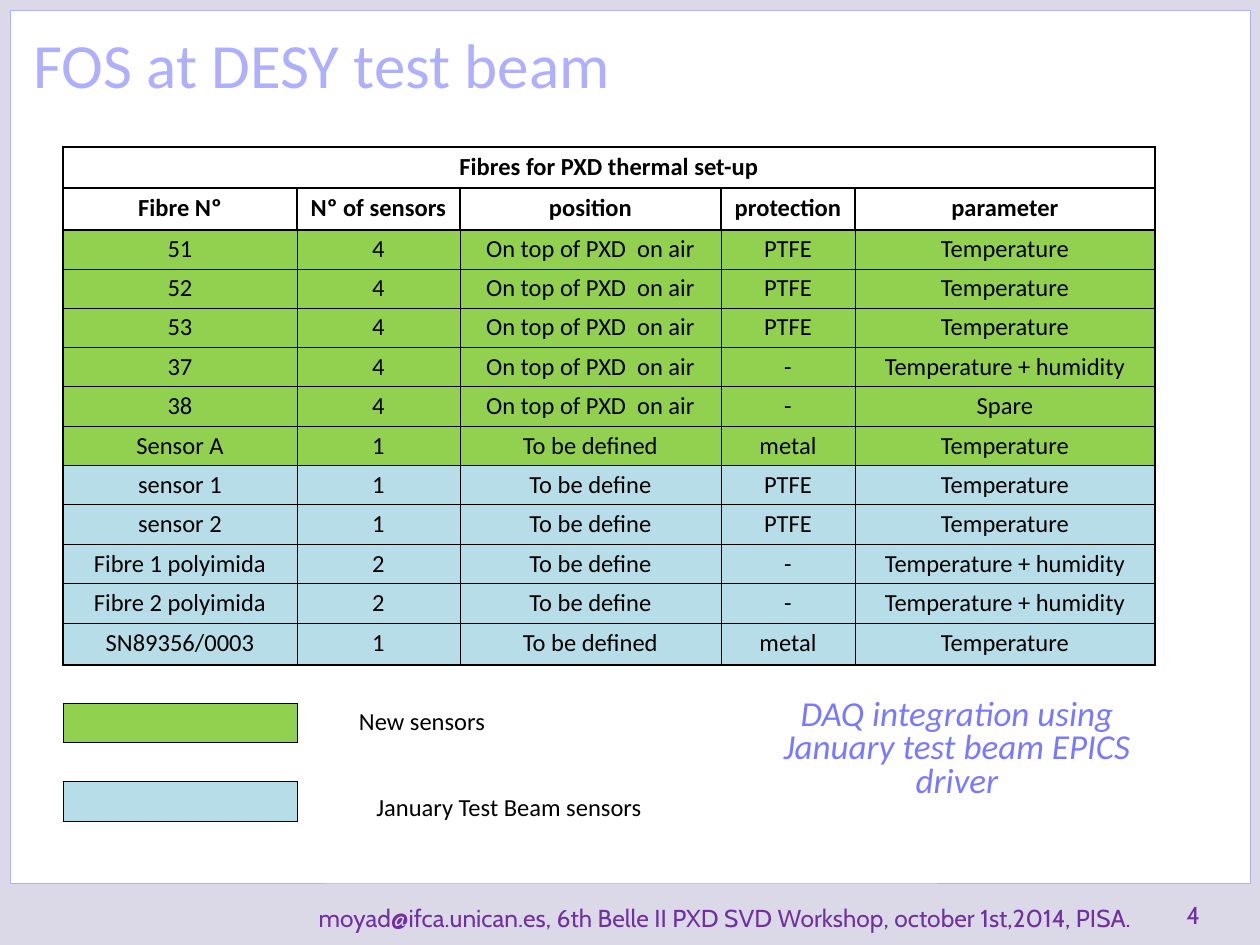
from lxml.etree import SubElement
from pptx import Presentation
from pptx.dml.color import RGBColor
from pptx.enum.shapes import MSO_SHAPE
from pptx.enum.text import MSO_ANCHOR, PP_ALIGN
from pptx.oxml.ns import qn
from pptx.util import Emu, Pt

PIXELS_PER_INCH = 126
COLORS = {
    "background": "DBD9E7",
    "panel": "FFFFFF",
    "title": "AFAFFF",
    "note": "7979FF",
    "footer": "7030A0",
    "text": "000000",
    "new": "92D050",
    "january": "B7DEE8",
}
NO_GRID_STYLE = "{2D5ABB26-0587-4C30-8999-92F81FD0307C}"
THIN, THICK = Pt(0.5), Pt(1)

HEADINGS = ["Fibre Nº", "Nº of sensors", "position", "protection", "parameter"]
ON_AIR = "On top of PXD  on air"
BOTH = "Temperature + humidity"
NEW_FIBRES = [
    ["51", "4", ON_AIR, "PTFE", "Temperature"],
    ["52", "4", ON_AIR, "PTFE", "Temperature"],
    ["53", "4", ON_AIR, "PTFE", "Temperature"],
    ["37", "4", ON_AIR, "-", BOTH],
    ["38", "4", ON_AIR, "-", "Spare"],
    ["Sensor A", "1", "To be defined", "metal", "Temperature"],
]
JANUARY_FIBRES = [
    ["sensor 1", "1", "To be define", "PTFE", "Temperature"],
    ["sensor 2", "1", "To be define", "PTFE", "Temperature"],
    ["Fibre 1 polyimida", "2", "To be define", "-", BOTH],
    ["Fibre 2 polyimida", "2", "To be define", "-", BOTH],
    ["SN89356/0003", "1", "To be defined", "metal", "Temperature"],
]
COLUMN_EDGES = [63, 297, 460, 721, 855, 1155]
BODY_EDGES = [230 + 394 * index // 10 for index in range(11)]
ROW_EDGES = [147, 188, *BODY_EDGES, 665, 704, 743, 780, 820]
NEW_LEGEND_ROW, JANUARY_LEGEND_ROW = 14, 16


def px(length):
    return Emu(round(length * 914400 / PIXELS_PER_INCH))


def color(name):
    return RGBColor.from_string(COLORS[name])


def add_run(paragraph, text, size, name, font="Calibri", bold=False, italic=False):
    run = paragraph.add_run()
    run.text = text
    run.font.size = Pt(size)
    run.font.name = font
    run.font.bold = bold
    run.font.italic = italic
    run.font.color.rgb = color(name)


def add_panel(slide):
    shape = slide.shapes.add_shape(MSO_SHAPE.RECTANGLE, px(10), px(10), px(1240), px(873))
    shape.shadow.inherit = False
    shape.fill.solid()
    shape.fill.fore_color.rgb = color("panel")
    shape.line.color.rgb = color("title")
    shape.line.width = Pt(0.25)


def add_text(slide, box, text, size, name, align=PP_ALIGN.LEFT,
             anchor=MSO_ANCHOR.TOP, spacing=1.0, **style):
    frame = slide.shapes.add_textbox(*map(px, box)).text_frame
    frame.word_wrap = True
    frame.vertical_anchor = anchor
    paragraph = frame.paragraphs[0]
    paragraph.alignment = align
    paragraph.line_spacing = spacing
    add_run(paragraph, text, size, name, **style)


def set_borders(cell, left, right, top, bottom):
    properties = cell._tc.get_or_add_tcPr()
    for tag, width in (("a:lnL", left), ("a:lnR", right), ("a:lnT", top), ("a:lnB", bottom)):
        line = SubElement(properties, qn(tag), w=str(int(width)))
        fill = SubElement(line, qn("a:solidFill"))
        SubElement(fill, qn("a:srgbClr"), val=COLORS["text"])


def set_fill(cell, name):
    cell.fill.solid()
    cell.fill.fore_color.rgb = color(name)


def write_cell(cell, text, align=PP_ALIGN.CENTER, bold=False):
    paragraph = cell.text_frame.paragraphs[0]
    paragraph.alignment = align
    add_run(paragraph, text, 14, "text", bold=bold)


def create_table(slide):
    left, top = COLUMN_EDGES[0], ROW_EDGES[0]
    table = slide.shapes.add_table(
        len(ROW_EDGES) - 1, len(COLUMN_EDGES) - 1, px(left), px(top),
        px(COLUMN_EDGES[-1] - left), px(ROW_EDGES[-1] - top)).table
    table._tbl.tblPr.find(qn("a:tableStyleId")).text = NO_GRID_STYLE
    table.first_row = table.horz_banding = False
    for items, edges, size in ((table.columns, COLUMN_EDGES, "width"),
                               (table.rows, ROW_EDGES, "height")):
        for item, start, end in zip(items, edges, edges[1:]):
            setattr(item, size, px(end - start))
    for cell in table.iter_cells():
        cell.margin_left = cell.margin_right = cell.margin_top = px(1)
        cell.margin_bottom = 0
        cell.vertical_anchor = MSO_ANCHOR.MIDDLE
        cell.text_frame.paragraphs[0].line_spacing = 0.8
    return table


def fill_headings(table):
    for row in range(2):
        for column, heading in enumerate(HEADINGS):
            cell = table.cell(row, column)
            set_borders(cell, THICK, THICK, THICK, THICK)
            cell.fill.background()
            if row == 1:
                write_cell(cell, heading, bold=True)
    table.cell(0, 0).merge(table.cell(0, len(HEADINGS) - 1))
    write_cell(table.cell(0, 0), "Fibres for PXD thermal set-up", bold=True)


def fill_fibres(table):
    fibres = [("new", values) for values in NEW_FIBRES]
    fibres += [("january", values) for values in JANUARY_FIBRES]
    last_row, last_column = len(fibres) - 1, len(HEADINGS) - 1
    for row, (name, values) in enumerate(fibres):
        for column, value in enumerate(values):
            cell = table.cell(row + 2, column)
            set_borders(cell,
                        THICK if column == 0 else THIN,
                        THICK if column == last_column else THIN,
                        THICK if row == 0 else THIN,
                        THICK if row == last_row else THIN)
            set_fill(cell, name)
            write_cell(cell, value)


def fill_legend(table, row, name, label, align):
    swatch = table.cell(row, 0)
    set_borders(swatch, THIN, THIN, THIN, THIN)
    set_fill(swatch, name)
    cell = table.cell(row, 1)
    cell.merge(table.cell(row, 2))
    write_cell(cell, label, align)
    return cell


def add_fibre_table(slide):
    table = create_table(slide)
    fill_headings(table)
    fill_fibres(table)
    label = fill_legend(table, NEW_LEGEND_ROW, "new", "New sensors", PP_ALIGN.LEFT)
    label.margin_left = px(62)
    label = fill_legend(table, JANUARY_LEGEND_ROW, "january",
                        "January Test Beam sensors", PP_ALIGN.CENTER)
    label.vertical_anchor = MSO_ANCHOR.BOTTOM


def main():
    presentation = Presentation()
    presentation.slide_width, presentation.slide_height = px(1260), px(945)
    slide = presentation.slides.add_slide(presentation.slide_layouts[6])
    slide.background.fill.solid()
    slide.background.fill.fore_color.rgb = color("background")
    add_panel(slide)
    add_text(slide, (21, 19, 976, 159), "FOS at DESY test beam", 36, "title")
    add_text(slide, (1174, 873, 73, 63), "4", 14, "footer",
             anchor=MSO_ANCHOR.BOTTOM, font="Cabin")
    add_text(slide, (231, 876, 913, 63),
             "moyad@ifca.unican.es, 6th Belle II PXD SVD Workshop, october 1st,2014, PISA.",
             14, "footer", PP_ALIGN.RIGHT, MSO_ANCHOR.BOTTOM, font="Cabin")
    add_fibre_table(slide)
    add_text(slide, (756, 693, 402, 157),
             "DAQ integration using January test beam EPICS driver",
             20, "note", PP_ALIGN.CENTER, spacing=0.8, italic=True)
    presentation.save("out.pptx")


if __name__ == "__main__":
    main()
